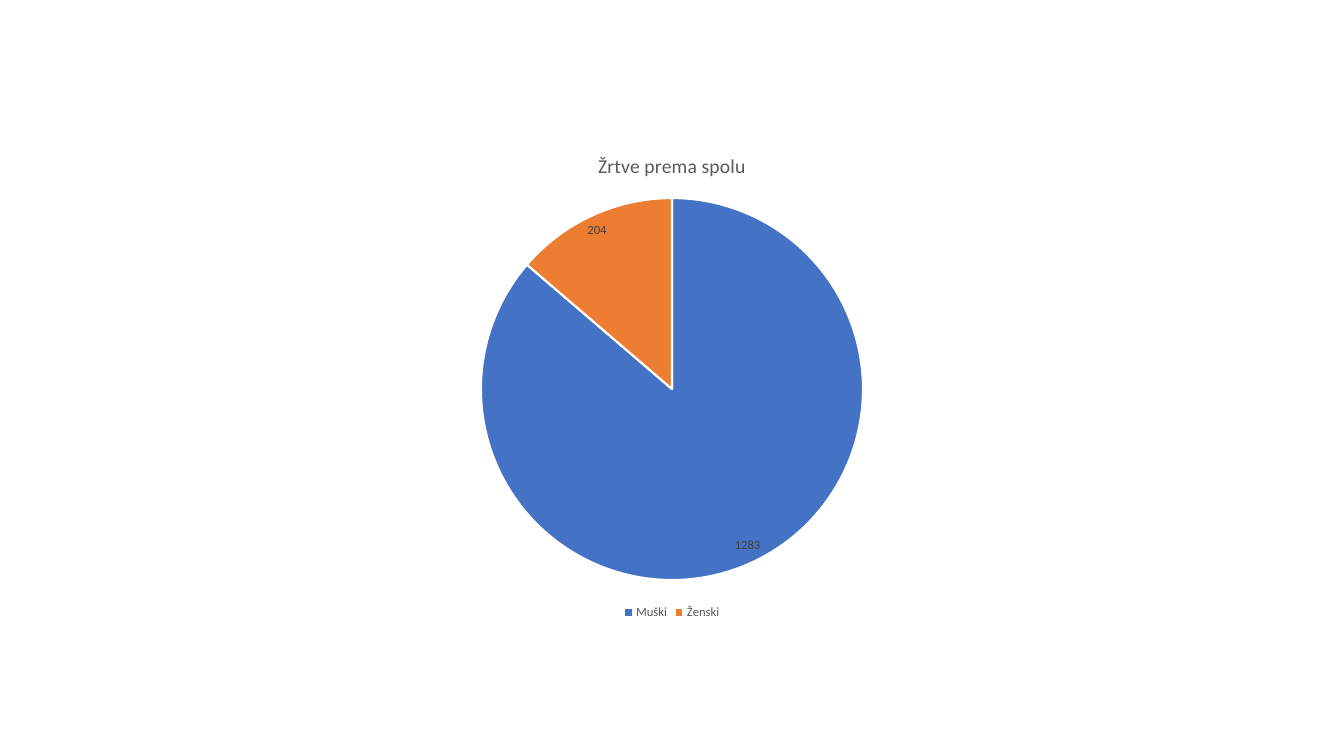
from pptx import Presentation
from pptx.chart.data import CategoryChartData
from pptx.dml.color import RGBColor
from pptx.enum import chart as ch
from pptx.util import Inches, Pt

FONT = "Calibri"
BLUE = RGBColor(0x44, 0x72, 0xC4)
ORANGE = RGBColor(0xED, 0x7D, 0x31)
WHITE = RGBColor(0xFF, 0xFF, 0xFF)
GREY = RGBColor(0x59, 0x59, 0x59)
DARK_GREY = RGBColor(0x40, 0x40, 0x40)


def set_font(font, size, color):
    font.name = FONT
    font.size = Pt(size)
    font.bold = False
    font.color.rgb = color


def add_title(chart, title):
    chart.has_title = True
    r = chart.chart_title.text_frame.paragraphs[0].add_run()
    r.text = title
    set_font(r.font, 14, GREY)
    chart.chart_title.include_in_layout = False


def add_legend(chart):
    chart.has_legend = True
    legend = chart.legend
    legend.position = ch.XL_LEGEND_POSITION.BOTTOM
    legend.include_in_layout = False
    set_font(legend.font, 9, GREY)


def style_slices(plot, colors):
    plot.vary_by_categories = True
    series = plot.series[0]
    for i, color in enumerate(colors):
        fmt = series.points[i].format
        fmt.fill.solid()
        fmt.fill.fore_color.rgb = color
        fmt.line.color.rgb = WHITE
        fmt.line.width = Pt(1.5)

    # Value labels
    labels = series.data_labels
    labels.show_value = True
    labels.show_percentage = False
    labels.position = ch.XL_LABEL_POSITION.BEST_FIT
    set_font(labels.font, 9, DARK_GREY)


def add_pie(s, title, values, colors, box):
    data = CategoryChartData()
    data.categories = list(values)
    data.add_series("Series 1", list(values.values()))
    frame = s.shapes.add_chart(ch.XL_CHART_TYPE.PIE,
                               *(Inches(n) for n in box), data)
    chart = frame.chart
    chart.font.name = FONT
    chart.font.size = Pt(10)
    add_title(chart, title)
    add_legend(chart)
    style_slices(chart.plots[0], colors)


def main():
    prs = Presentation()
    prs.slide_width = Inches(13.33)
    prs.slide_height = Inches(7.5)
    s = prs.slides.add_slide(prs.slide_layouts[6])

    # Victims by sex
    add_pie(s, "Žrtve prema spolu", {"Muški": 1283, "Ženski": 204},
            [BLUE, ORANGE], (2.61, 1.32, 8.11, 4.87))
    prs.save("out.pptx")


if __name__ == "__main__":
    main()
